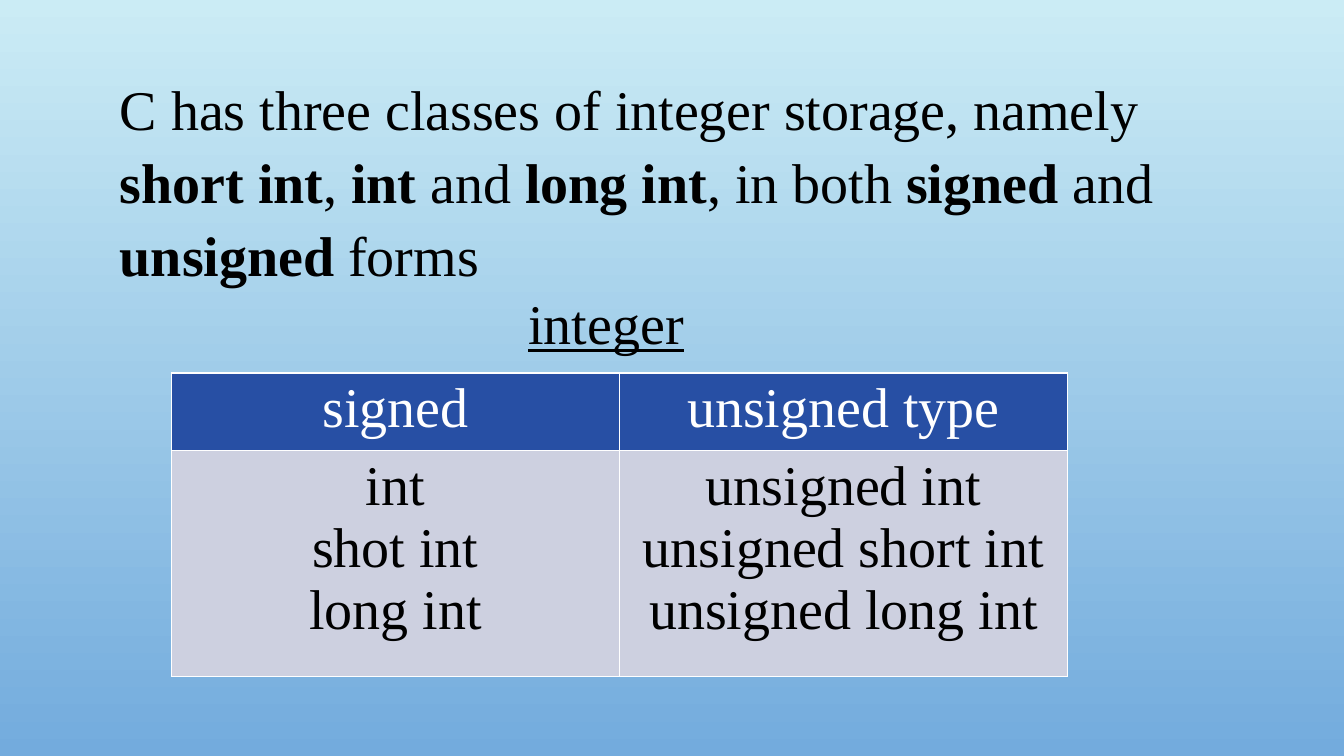
import pptx
import pptx.util
import pptx.dml.color
import pptx.enum.text
import pptx.oxml
import pptx.oxml.ns

Cm, Pt = pptx.util.Cm, pptx.util.Pt
RGBColor = pptx.dml.color.RGBColor
CENTER = pptx.enum.text.PP_ALIGN.CENTER

INTRO = [
    ("C has three classes of integer storage, namely ", False),
    ("short int", True), (", ", False), ("int", True), (" and ", False),
    ("long int", True), (", in both ", False), ("signed", True),
    (" and ", False), ("unsigned", True), (" forms", False),
]
LABEL = "integer"
TYPES = [
    (["signed"], ["unsigned type"]),
    (["int", "shot int", "long int"],
     ["unsigned int", "unsigned short int", "unsigned long int"]),
]

SKY = RGBColor(0xCB, 0xEC, 0xF5)
BLUE = RGBColor(0x73, 0xAB, 0xDD)
NAVY = RGBColor(0x27, 0x4F, 0xA4)
PALE = RGBColor(0xCD, 0xD0, 0xE0)
BLACK = RGBColor(0, 0, 0)
WHITE = RGBColor(255, 255, 255)

# Fill, text colour and height of each table row
ROWS = [(NAVY, WHITE, Cm(1.93)), (PALE, BLACK, Cm(5.69))]
COL = Cm(11.29)


def style(par, color):
    par.font.name = "Times New Roman"
    par.font.size = Pt(40)
    par.font.color.rgb = color


def add_text(slide, left, top, width, height, runs):
    frame = slide.shapes.add_textbox(left, top, width, height).text_frame
    frame.word_wrap = True
    par = frame.paragraphs[0]
    for text, bold in runs:
        run = par.add_run()
        run.text = text
        if bold:
            run.font.bold = True
    par.line_spacing = 1.08
    style(par, BLACK)
    return par


def add_edges(cell):
    """Draw white lines on all four sides; they must precede the cell fill."""
    props = cell._tc.get_or_add_tcPr()
    for side in "LRTB":
        props.append(pptx.oxml.parse_xml(
            f'<a:ln{side} {pptx.oxml.ns.nsdecls("a")} w="{Pt(1)}"><a:solidFill>'
            f'<a:srgbClr val="{WHITE}"/></a:solidFill></a:ln{side}>'))


def add_types(slide):
    table = slide.shapes.add_table(
        len(TYPES), len(TYPES[0]), Cm(4.32), Cm(9.4),
        COL * len(TYPES[0]), sum(row[2] for row in ROWS)).table
    for r, (fill, color, height) in enumerate(ROWS):
        table.rows[r].height = height
        for c, lines in enumerate(TYPES[r]):
            table.columns[c].width = COL
            cell = table.cell(r, c)
            add_edges(cell)
            cell.fill.solid()
            cell.fill.fore_color.rgb = fill
            cell.text = "\n".join(lines)
            for par in cell.text_frame.paragraphs:
                par.alignment = CENTER
                style(par, color)
                par.font.bold = False


def main():
    deck = pptx.Presentation()
    deck.slide_width, deck.slide_height = Cm(33.87), Cm(19.05)
    slide = deck.slides.add_slide(deck.slide_layouts[6])

    fill = slide.background.fill
    fill.gradient()
    fill.gradient_angle = 270
    for stop, color in zip(fill.gradient_stops, (SKY, BLUE)):
        stop.color.rgb = color

    add_text(slide, Cm(2.77), Cm(1.63), Cm(28.07), Cm(5.38), INTRO)
    add_types(slide)
    label = add_text(slide, Cm(10.64), Cm(7.01), Cm(9.27), Cm(1.96),
                     [(LABEL, False)])
    label.alignment = CENTER
    label.font.underline = True
    deck.save("out.pptx")


if __name__ == "__main__":
    main()
